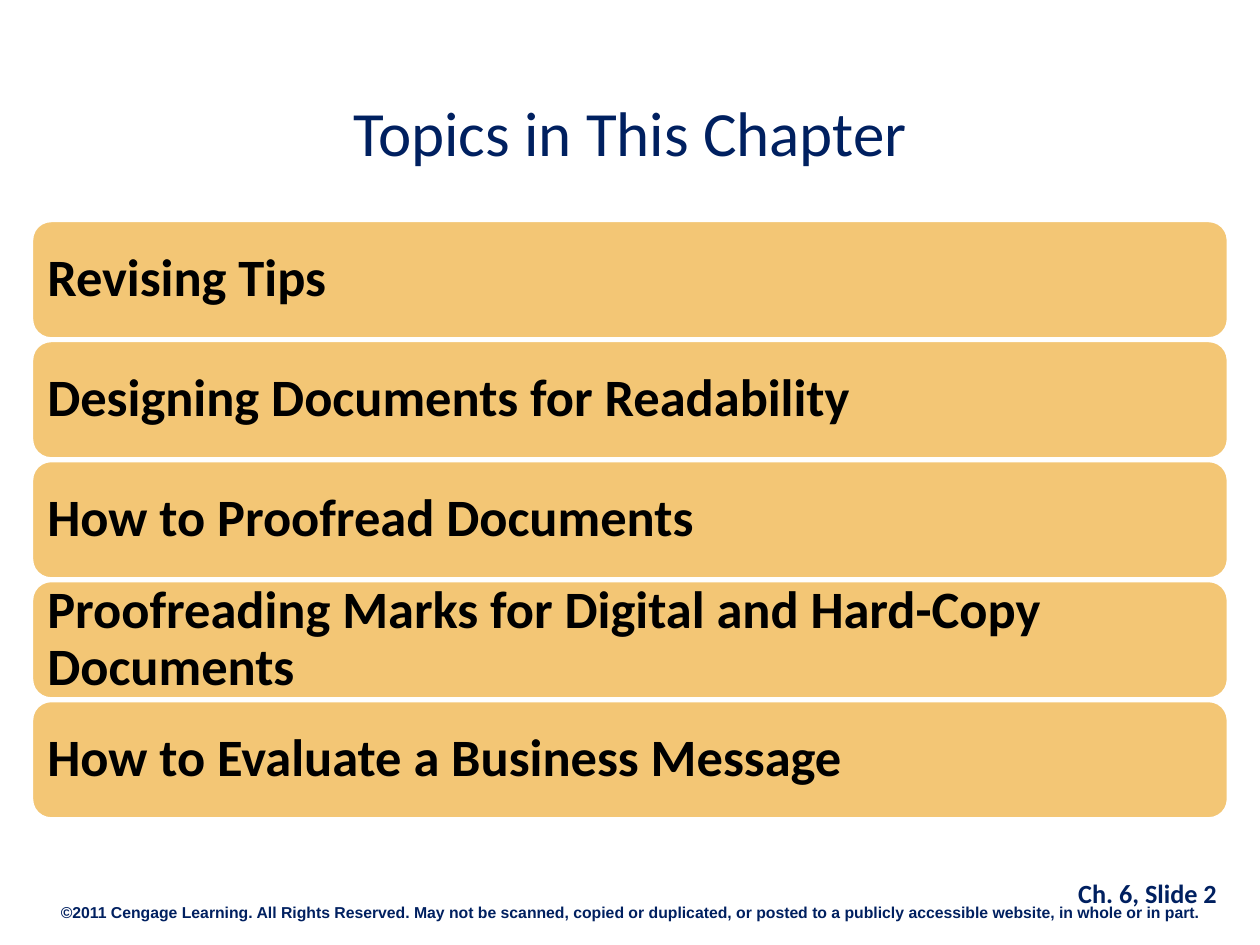
from pptx import Presentation
from pptx.dml.color import RGBColor
from pptx.enum.shapes import MSO_SHAPE
from pptx.enum.text import MSO_ANCHOR, PP_ALIGN
from pptx.util import Inches, Pt

NAVY, BLACK, WHITE, GOLD = "002060", "000000", "FFFFFF", "F3C675"

TOPICS = [
    "Revising Tips",
    "Designing Documents for Readability",
    "How to Proofread Documents",
    "Proofreading Marks for Digital and Hard-Copy Documents",
    "How to Evaluate a Business Message",
]
COPYRIGHT = (
    "©2011 Cengage Learning. All Rights Reserved. May not be scanned, copied or "
    "duplicated, or posted to a publicly accessible website, in whole or in part."
)


def color(hex_string):
    return RGBColor.from_string(hex_string)


def write_text(frame, text, *, size, font="Calibri", fill=NAVY, bold=True,
               align=PP_ALIGN.CENTER, line_spacing=0.9, anchor=MSO_ANCHOR.MIDDLE):
    frame.word_wrap = True
    frame.vertical_anchor = anchor
    paragraph = frame.paragraphs[0]
    paragraph.alignment = align
    paragraph.line_spacing = line_spacing
    run = paragraph.add_run()
    run.text = text
    run.font.name = font
    run.font.size = Pt(size)
    run.font.bold = bold
    run.font.color.rgb = color(fill)


class SlideBuilder:
    """Holds the current slide and the style of its topic bars."""

    bar_fill = GOLD
    bar_line = WHITE
    bar_line_width = 2
    bar_inset = 0.08

    def __init__(self, slide):
        self.slide = slide

    def title(self, text, left, top, width, height):
        shape = self.slide.shapes.title
        shape.left, shape.top = Inches(left), Inches(top)
        shape.width, shape.height = Inches(width), Inches(height)
        write_text(shape.text_frame, text, size=36, bold=False)

    def bar(self, text, left, top, width, height):
        shape = self.slide.shapes.add_shape(
            MSO_SHAPE.ROUNDED_RECTANGLE,
            Inches(left), Inches(top), Inches(width), Inches(height))
        shape.shadow.inherit = False
        shape.fill.solid()
        shape.fill.fore_color.rgb = color(self.bar_fill)
        shape.line.color.rgb = color(self.bar_line)
        shape.line.width = Pt(self.bar_line_width)
        frame = shape.text_frame
        frame.margin_left = frame.margin_right = Inches(self.bar_inset)
        frame.margin_top = frame.margin_bottom = Inches(self.bar_inset)
        write_text(frame, text, size=30, fill=BLACK, align=PP_ALIGN.LEFT)

    def footer(self, text, left, top, width, height, **text_format):
        box = self.slide.shapes.add_textbox(
            Inches(left), Inches(top), Inches(width), Inches(height))
        write_text(box.text_frame, text, line_spacing=0.6,
                   anchor=MSO_ANCHOR.TOP, **text_format)


def main():
    presentation = Presentation()
    presentation.slide_width = Inches(10)
    presentation.slide_height = Inches(7.5)
    title_only = presentation.slide_layouts[5]
    builder = SlideBuilder(presentation.slides.add_slide(title_only))

    # Footer lines
    builder.footer(COPYRIGHT, 0, 7.17, 10, 0.19, size=9, font="Arial")
    builder.footer(" Ch. 6, Slide 2", 8.17, 7, 1.83, 0.33, size=15)

    # Title
    left, width = 0.25, 9.5
    builder.title("Topics in This Chapter", left, 0.58, width, 1)

    # Topic bars, spread evenly between the first top and the last bottom
    first_top, last_bottom, bar_height = 1.75, 6.5, 0.94
    pitch = (last_bottom - first_top - bar_height) / (len(TOPICS) - 1)
    for index, topic in enumerate(TOPICS):
        builder.bar(topic, left, first_top + index * pitch, width, bar_height)

    presentation.save("out.pptx")


if __name__ == "__main__":
    main()
